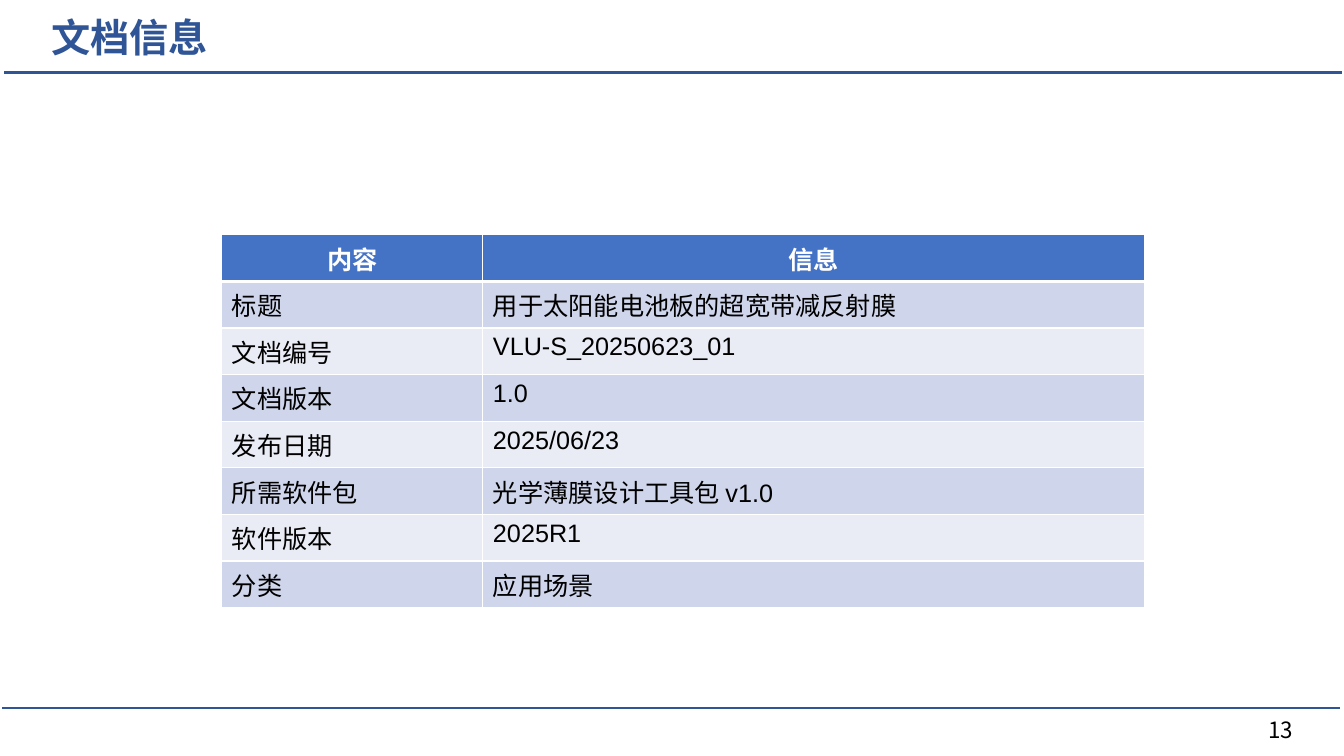
from dataclasses import dataclass

from lxml import etree
from pptx import Presentation, util as u
from pptx.dml.color import RGBColor
from pptx.enum import shapes, text
from pptx.oxml.ns import qn

COLORS = {
    "navy": "2F5597",
    "header": "4472C4",
    "band_dark": "CFD5EA",
    "band_light": "E9EBF5",
    "white": "FFFFFF",
    "black": "000000",
}
LATIN_FONT, CJK_FONT = "Arial", "Noto Sans CJK SC"
WIDTH, HEIGHT = u.Inches(13.33), u.Inches(7.5)


@dataclass
class Rule:
    left: float
    right: float
    y: float
    weight: float


@dataclass
class Label:
    words: str
    left: float
    top: float
    width: float
    height: float
    size: int
    color: str
    bold: bool = False
    spacing: float = 1.0


# Positions are percentages of the slide's width and height
RULES = [
    Rule(0.3, 99.85, 9.6, 2.25),
    Rule(0.15, 99.7, 93.6, 1.5),
]
LABELS = [
    Label("13", 93.62, 93.87, 4.13, 5.33, 16, "black"),
    Label("文档信息", 3.08, 2.27, 38.86, 6, 28, "navy", True, 0.9),
]
INFO_LEFT, INFO_TOP = 16.5, 31.07
INFO_COLUMNS = (19.43, 49.21)
INFO_ROW = 5.4
INFO = [
    ("内容", "信息"),
    ("标题", "用于太阳能电池板的超宽带减反射膜"),
    ("文档编号", "VLU-S_20250623_01"),
    ("文档版本", "1.0"),
    ("发布日期", "2025/06/23"),
    ("所需软件包", "光学薄膜设计工具包 v1.0"),
    ("软件版本", "2025R1"),
    ("分类", "应用场景"),
]


def across(percent: float) -> int:
    return round(WIDTH * percent / 100)


def down(percent: float) -> int:
    return round(HEIGHT * percent / 100)


def rgb(name: str) -> RGBColor:
    return RGBColor.from_string(COLORS[name])


def style(paragraph, size: int, color: str, bold: bool, latin: str) -> None:
    font = paragraph.font
    font.size, font.bold, font.name = u.Pt(size), bold, latin
    font.color.rgb = rgb(color)
    defaults = paragraph._p.pPr.find(qn("a:defRPr"))
    etree.SubElement(defaults, qn("a:ea"), typeface=CJK_FONT)


def draw_rule(slide, rule: Rule) -> None:
    line = slide.shapes.add_connector(
        shapes.MSO_CONNECTOR.STRAIGHT,
        across(rule.left), down(rule.y), across(rule.right), down(rule.y))
    line.line.color.rgb = rgb("navy")
    line.line.width = u.Pt(rule.weight)
    etree.SubElement(line._element.spPr, qn("a:effectLst"))


def draw_label(slide, label: Label) -> None:
    box = slide.shapes.add_textbox(across(label.left), down(label.top),
                                   across(label.width), down(label.height))
    frame = box.text_frame
    frame.word_wrap = True
    frame.vertical_anchor = text.MSO_ANCHOR.MIDDLE
    paragraph = frame.paragraphs[0]
    paragraph.text = label.words
    paragraph.line_spacing = label.spacing
    style(paragraph, label.size, label.color, label.bold, CJK_FONT)


def add_borders(cell, top: float, bottom: float) -> None:
    properties = cell._tc.get_or_add_tcPr()
    for side, weight in (("L", 1), ("R", 1), ("T", top), ("B", bottom)):
        border = etree.SubElement(properties, qn(f"a:ln{side}"), w=str(u.Pt(weight)))
        fill = etree.SubElement(border, qn("a:solidFill"))
        etree.SubElement(fill, qn("a:srgbClr"), val=COLORS["white"])


def draw_info(slide) -> None:
    table = slide.shapes.add_table(
        len(INFO), len(INFO_COLUMNS), across(INFO_LEFT), down(INFO_TOP),
        across(sum(INFO_COLUMNS)), down(INFO_ROW * len(INFO))).table
    for column, share in zip(table.columns, INFO_COLUMNS):
        column.width = across(share)
    for row, entries in enumerate(INFO):
        table.rows[row].height = down(INFO_ROW)
        header = row == 0
        band = "header" if header else "band_dark" if row % 2 else "band_light"
        for column, entry in enumerate(entries):
            cell = table.cell(row, column)
            # A thick border parts the header from the entries
            add_borders(cell, 3 if row == 1 else 1, 3 if header else 1)
            cell.fill.solid()
            cell.fill.fore_color.rgb = rgb(band)
            paragraph = cell.text_frame.paragraphs[0]
            paragraph.text = entry
            paragraph.alignment = text.PP_ALIGN.CENTER if header else text.PP_ALIGN.LEFT
            style(paragraph, 18, "white" if header else "black", header, LATIN_FONT)


def main() -> None:
    deck = Presentation()
    deck.slide_width, deck.slide_height = WIDTH, HEIGHT
    slide = deck.slides.add_slide(deck.slide_layouts[6])

    # Header and footer rules
    for rule in RULES:
        draw_rule(slide, rule)

    # Document details
    draw_info(slide)

    # Page number and title
    for label in LABELS:
        draw_label(slide, label)

    deck.save("out.pptx")


if __name__ == "__main__":
    main()
